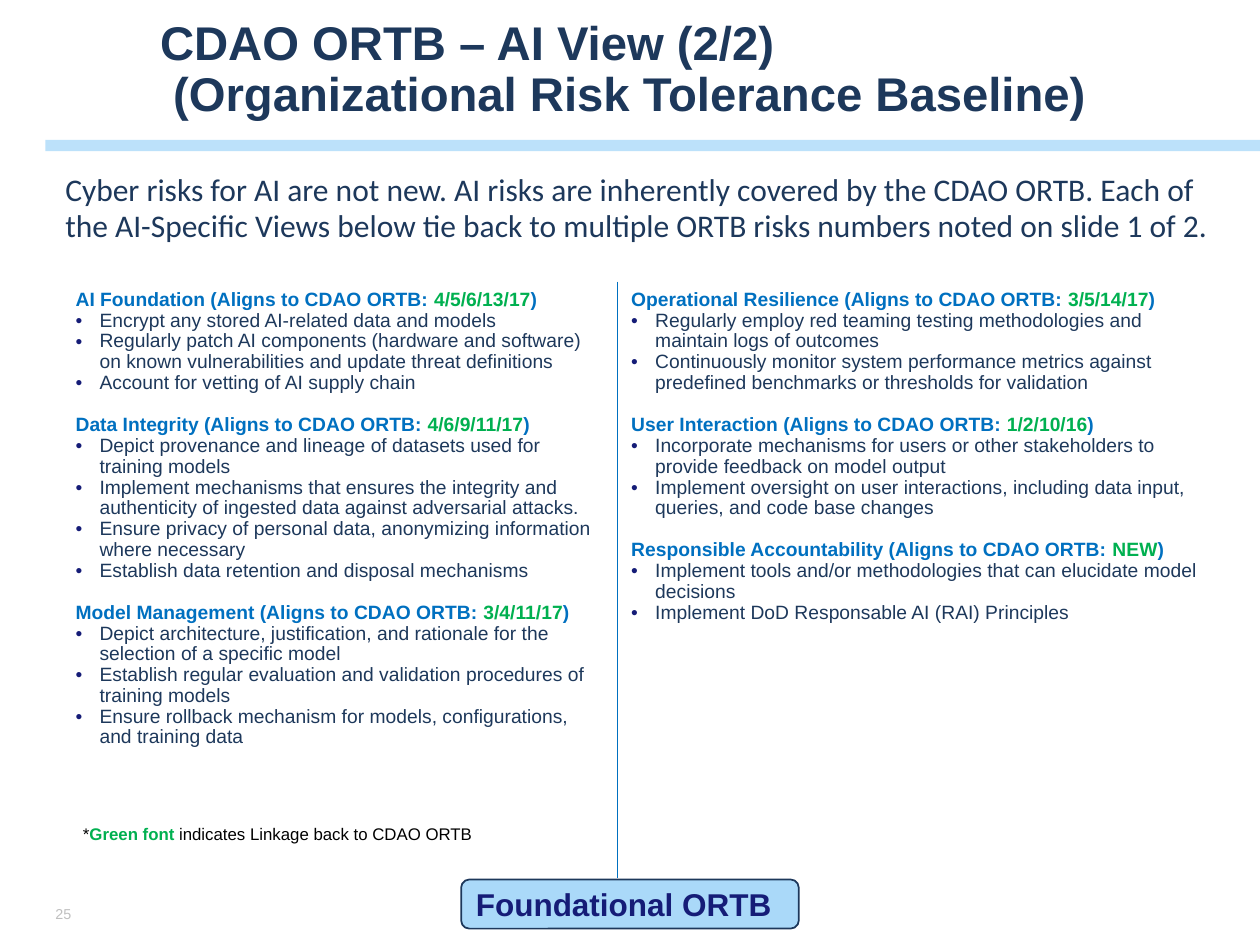
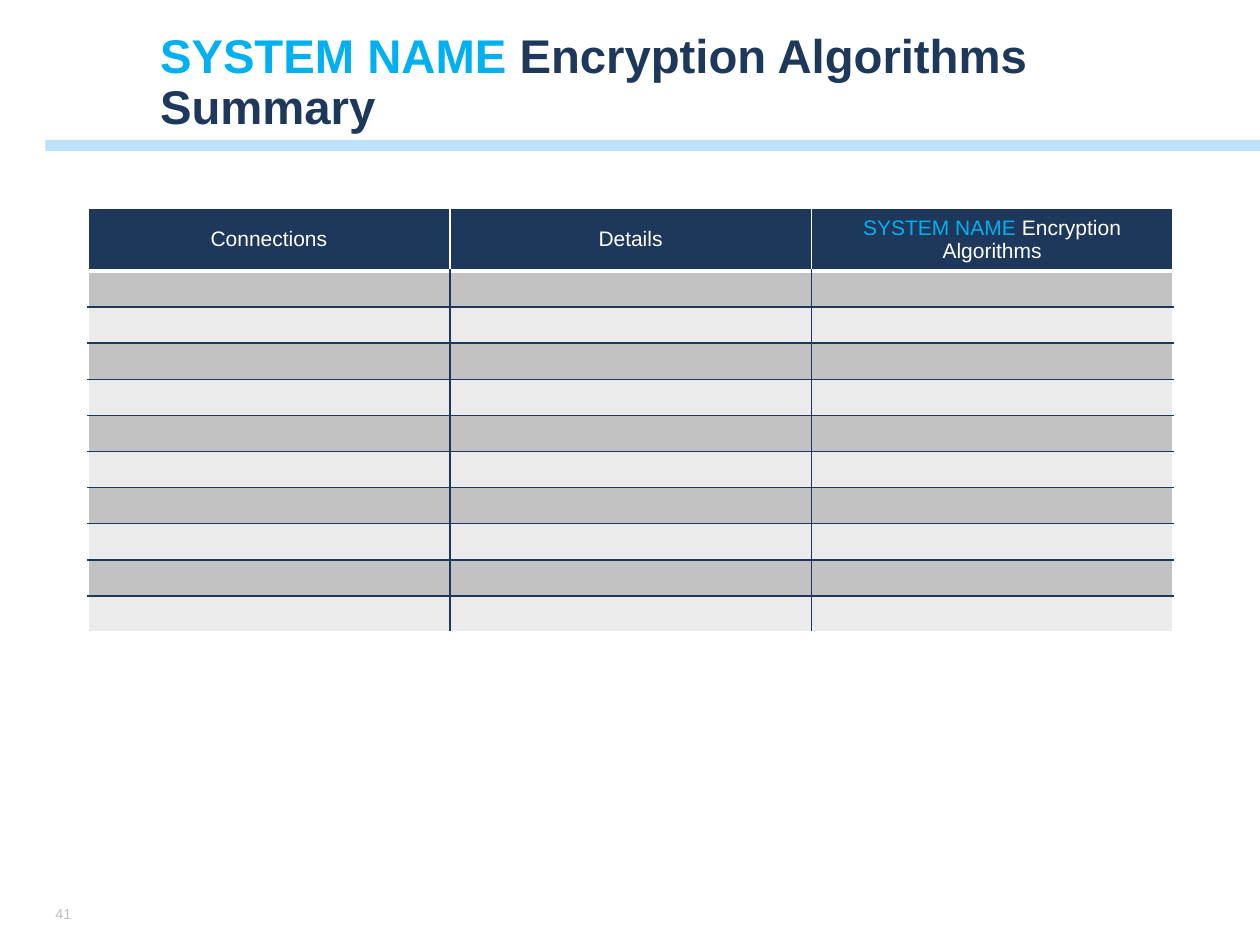
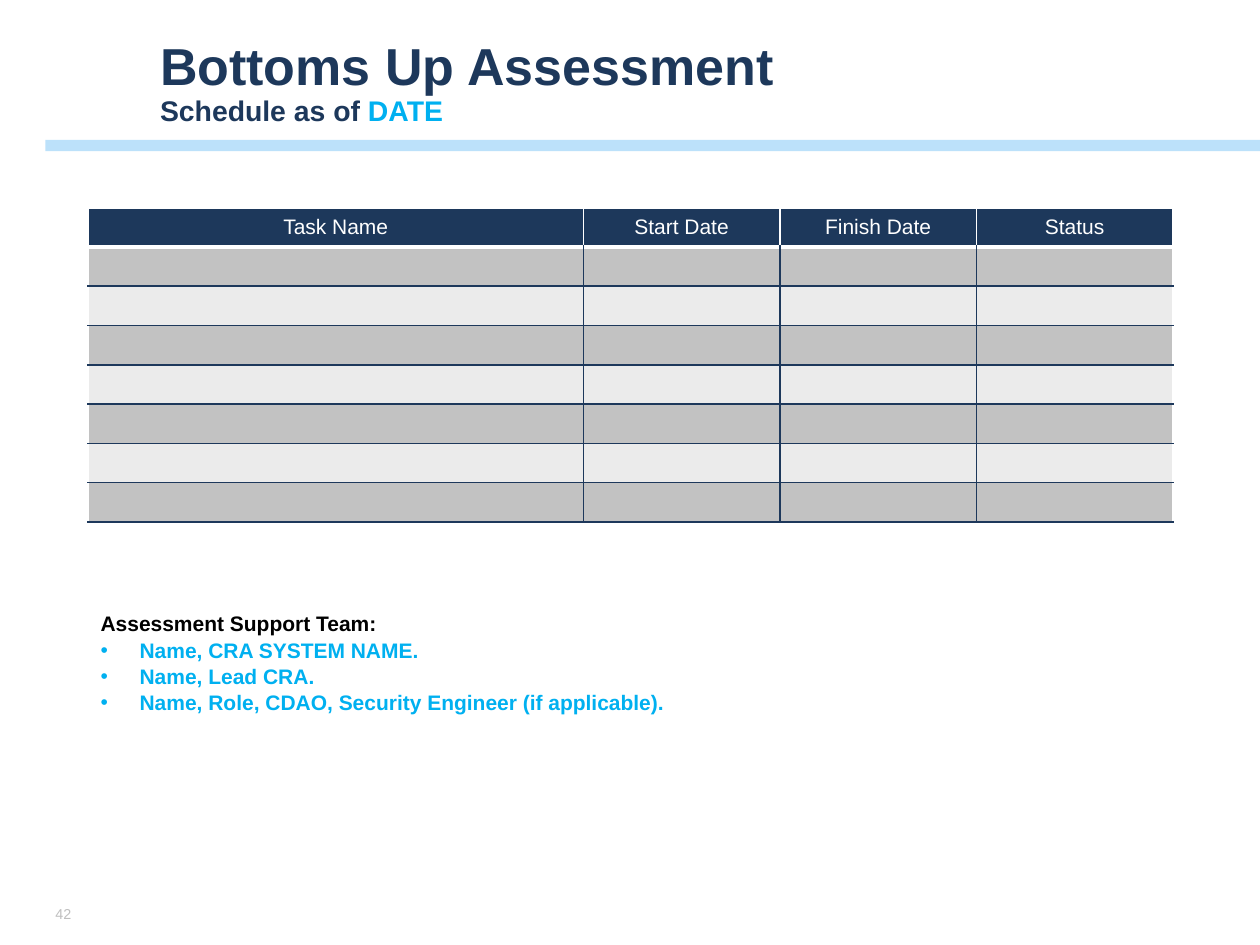
"""Build three security assessment slides: a risk view and two status tables."""
from dataclasses import dataclass, field
from typing import NamedTuple

import lxml.etree
import pptx
import pptx.dml.color
import pptx.enum.shapes
import pptx.enum.text
import pptx.oxml.ns
import pptx.util

RGBColor = pptx.dml.color.RGBColor
Pt = pptx.util.Pt
Shape = pptx.enum.shapes.MSO_SHAPE
Align = pptx.enum.text.PP_ALIGN
Anchor = pptx.enum.text.MSO_ANCHOR
qn = pptx.oxml.ns.qn

NAVY = RGBColor(0x1D, 0x38, 0x5B)
INDIGO = RGBColor(0x15, 0x1C, 0x77)
BLUE = RGBColor(0x00, 0x70, 0xC0)
CYAN = RGBColor(0x00, 0xB0, 0xF0)
SKY = RGBColor(0x65, 0xBA, 0xF5)
GREEN = RGBColor(0x00, 0xB0, 0x50)
BLACK = RGBColor(0x00, 0x00, 0x00)
WHITE = RGBColor(0xFF, 0xFF, 0xFF)
SILVER = RGBColor(0xBF, 0xBF, 0xBF)
DARK_ROW = RGBColor(0xC2, 0xC2, 0xC2)
LIGHT_ROW = RGBColor(0xEB, 0xEB, 0xEB)

WIDTH, HEIGHT = pptx.util.Inches(10), pptx.util.Inches(7.5)
COLUMNS, ROWS = 100, 75


class Area(NamedTuple):
    """A rectangle in grid columns and rows."""
    column: float
    row: float
    columns: float
    rows: float


class Span(NamedTuple):
    """A piece of text with its own format."""
    text: str
    colour: RGBColor = NAVY
    size: float = 27
    bold: bool = True


class Topic(NamedTuple):
    """A heading with its linked risk numbers and its points."""
    name: str
    risks: str
    points: list[str]


@dataclass
class Grid:
    """A striped table with a header row."""
    headers: list[list[Span]]
    widths: list[float]
    header_rows: float
    body_rows: float
    count: int
    last_edge: RGBColor
    column: float = 7
    row: float = 16.5
    stripes: tuple = field(default=(DARK_ROW, LIGHT_ROW))


TITLE_AREA = Area(11.7, 3.3, 86.1, 6.7)
BAND_AREA = Area(3.6, 11.1, 96.4, 0.9)
NUMBER_AREA = Area(3.7, 71.2, 3.2, 2.6)

LEFT_TOPICS = [
    Topic("AI Foundation", "4/5/6/13/17", [
        "Encrypt any stored AI-related data and models",
        "Regularly patch AI components (hardware and software) on known "
        "vulnerabilities and update threat definitions",
        "Account for vetting of AI supply chain"]),
    Topic("Data Integrity", "4/6/9/11/17", [
        "Depict provenance and lineage of datasets used for training models",
        "Implement mechanisms that ensures the integrity and authenticity of "
        "ingested data against adversarial attacks.",
        "Ensure privacy of personal data, anonymizing information where necessary",
        "Establish data retention and disposal mechanisms"]),
    Topic("Model Management", "3/4/11/17", [
        "Depict architecture, justification, and rationale for the selection of "
        "a specific model",
        "Establish regular evaluation and validation procedures of training models",
        "Ensure rollback mechanism for models, configurations, and training data"]),
]
RIGHT_TOPICS = [
    Topic("Operational Resilience", "3/5/14/17", [
        "Regularly employ red teaming testing methodologies and maintain logs of "
        "outcomes",
        "Continuously monitor system performance metrics against predefined "
        "benchmarks or thresholds for validation"]),
    Topic("User Interaction", "1/2/10/16", [
        "Incorporate mechanisms for users or other stakeholders to provide "
        "feedback on model output",
        "Implement oversight on user interactions, including data input, queries, "
        "and code base changes"]),
    Topic("Responsible Accountability", "NEW", [
        "Implement tools and/or methodologies that can elucidate model decisions",
        "Implement DoD Responsable AI (RAI) Principles"]),
]
TEAM = ["Name, CRA SYSTEM NAME.", "Name, Lead CRA.",
        "Name, Role, CDAO, Security Engineer (if applicable)."]


def across(columns: float) -> int:
    """Turn grid columns into a length."""
    return round(WIDTH * columns / COLUMNS)


def down(rows: float) -> int:
    """Turn grid rows into a length."""
    return round(HEIGHT * rows / ROWS)


def place(area: Area) -> tuple[int, int, int, int]:
    """Turn a grid area into left, top, width and height."""
    return across(area.column), down(area.row), across(area.columns), down(area.rows)


def write(para, text: str, *, size: float, colour: RGBColor, bold: bool = False,
          font: str = "Arial") -> None:
    """Add text to a paragraph, turning each newline into a line break."""
    for index, line in enumerate(text.split("\n")):
        if index:
            para.add_line_break()
        run = para.add_run()
        run.text = line
        run.font.size, run.font.name, run.font.bold = Pt(size), font, bold
        run.font.color.rgb = colour


def write_spans(para, spans: list[Span]) -> None:
    """Add several formatted spans to a paragraph."""
    for span in spans:
        write(para, span.text, size=span.size, colour=span.colour, bold=span.bold)


def next_paragraph(frame):
    """Return the first paragraph while it is empty, otherwise a new one."""
    first = frame.paragraphs[0]
    return frame.add_paragraph() if first.runs else first


def add_bullet(para, indent: float, colour: RGBColor) -> None:
    """Give a paragraph a coloured bullet with a hanging indent in columns."""
    properties = para._p.get_or_add_pPr()
    properties.set("marL", str(across(indent)))
    properties.set("indent", str(-across(indent)))
    paint = lxml.etree.SubElement(properties, qn("a:buClr"))
    lxml.etree.SubElement(paint, qn("a:srgbClr"), val=str(colour))
    lxml.etree.SubElement(properties, qn("a:buFont"), typeface="Arial")
    lxml.etree.SubElement(properties, qn("a:buChar"), char="•")


def add_text_box(page, area: Area):
    """Add a wrapping text box and return its text frame."""
    frame = page.shapes.add_textbox(*place(area)).text_frame
    frame.word_wrap = True
    return frame


def add_panel(page, area: Area, kind, opacity: int):
    """Add a translucent sky-blue shape without a line or shadow."""
    panel = page.shapes.add_shape(kind, *place(area))
    panel.shadow.inherit = False
    panel.fill.solid()
    panel.fill.fore_color.rgb = SKY
    paint = panel.fill._xPr.find(".//" + qn("a:srgbClr"))
    lxml.etree.SubElement(paint, qn("a:alpha"), val=str(opacity * 1000))
    panel.line.fill.background()
    return panel


def add_page(deck, number: int, title: list[Span], bottom: float = 0.5):
    """Add a page with its title, band and page number."""
    page = deck.slides.add_slide(deck.slide_layouts[5])
    add_panel(page, BAND_AREA, Shape.RECTANGLE, 43)
    heading = page.shapes.title
    heading.left, heading.top, heading.width, heading.height = place(TITLE_AREA)
    frame = heading.text_frame
    frame.word_wrap = True
    frame.auto_size = pptx.enum.text.MSO_AUTO_SIZE.NONE
    frame.vertical_anchor = Anchor.MIDDLE
    frame.margin_bottom = down(bottom)
    para = frame.paragraphs[0]
    para.alignment, para.line_spacing = Align.LEFT, 0.9
    write_spans(para, title)
    frame = add_text_box(page, NUMBER_AREA)
    frame.vertical_anchor = Anchor.MIDDLE
    frame.margin_left = frame.margin_right = across(0.7)
    frame.margin_top = frame.margin_bottom = down(0.4)
    write(frame.paragraphs[0], str(number), size=8.2, colour=SILVER)
    return page


def set_borders(cell, **edges: tuple[RGBColor, float]) -> None:
    """Draw cell borders, named L, R, T and B, ahead of the cell's fill."""
    properties = cell._tc.get_or_add_tcPr()
    for index, (side, (colour, points)) in enumerate(edges.items()):
        line = lxml.etree.Element(qn(f"a:ln{side}"), w=str(Pt(points)))
        paint = lxml.etree.SubElement(line, qn("a:solidFill"))
        lxml.etree.SubElement(paint, qn("a:srgbClr"), val=str(colour))
        properties.insert(index, line)


def add_plain_table(page, area: Area, widths: list[float], heights: list[float]):
    """Add a table without banding, sized by grid columns and rows."""
    table = page.shapes.add_table(len(heights), len(widths), *place(area)).table
    table.first_row = table.horz_banding = False
    for column, width in zip(table.columns, widths):
        column.width = across(width)
    for row, height in zip(table.rows, heights):
        row.height = down(height)
    return table


def paint_cell(cell, colour: RGBColor) -> None:
    """Fill a cell with one colour."""
    cell.fill.solid()
    cell.fill.fore_color.rgb = colour


def add_grid(page, grid: Grid) -> None:
    """Add a striped table with a header and empty rows."""
    heights = [grid.header_rows] + [grid.body_rows] * grid.count
    area = Area(grid.column, grid.row, sum(grid.widths), sum(heights))
    table = add_plain_table(page, area, grid.widths, heights)
    last = len(grid.widths) - 1
    for index, spans in enumerate(grid.headers):
        cell = table.cell(0, index)
        paint_cell(cell, NAVY)
        set_borders(cell, L=(WHITE, 1), R=(WHITE, 1), T=(WHITE, 1), B=(WHITE, 3))
        cell.vertical_anchor = Anchor.MIDDLE
        para = cell.text_frame.paragraphs[0]
        para.alignment = Align.CENTER
        write_spans(para, spans)
        for row in range(1, grid.count + 1):
            cell = table.cell(row, index)
            paint_cell(cell, grid.stripes[(row - 1) % 2])
            set_borders(cell,
                        L=(NAVY if index else WHITE, 1),
                        R=(NAVY if index < last else WHITE, 1),
                        T=(NAVY if row > 1 else WHITE, 1),
                        B=(NAVY if row < grid.count else grid.last_edge, 1))
            para = cell.text_frame.paragraphs[0]
            lxml.etree.SubElement(para._p, qn("a:endParaRPr"), sz="1000")


def write_topics(cell, topics: list[Topic]) -> None:
    """Write headed bullet lists into a table cell."""
    cell.margin_left = cell.margin_right = across(1.1)
    cell.margin_top = cell.margin_bottom = down(0.6)
    frame = cell.text_frame
    for index, topic in enumerate(topics):
        para = next_paragraph(frame)
        para.line_spacing = 0.97
        if index:
            para.space_before = Pt(12.2)
        write_spans(para, [Span(f"{topic.name} (Aligns to CDAO ORTB: ", BLUE, 11),
                           Span(topic.risks, GREEN, 11), Span(")", BLUE, 11)])
        for point in topic.points:
            para = next_paragraph(frame)
            para.line_spacing = 0.97
            add_bullet(para, 1.9, INDIGO)
            write(para, point, size=11, colour=NAVY)


def build_risk_view(deck) -> None:
    """Build the AI risk view."""
    page = add_page(deck, 25, [Span(
        "CDAO ORTB – AI View (2/2)\n (Organizational Risk Tolerance Baseline)")],
        bottom=2.6)
    table = add_plain_table(page, Area(4.9, 22.4, 92.9, 47.2), [44.1, 48.8], [47.2])
    left, right = table.cell(0, 0), table.cell(0, 1)
    for cell, topics in ((left, LEFT_TOPICS), (right, RIGHT_TOPICS)):
        paint_cell(cell, WHITE)
        write_topics(cell, topics)
    set_borders(left, R=(BLUE, 1))
    set_borders(right, L=(BLUE, 1))

    note = add_text_box(page, Area(5.6, 64.9, 39.9, 2.6)).paragraphs[0]
    write_spans(note, [Span("*", BLACK, 9.6, False), Span("Green font ", GREEN, 9.6),
                       Span("indicates Linkage back to CDAO ORTB", BLACK, 9.6, False)])

    badge = add_panel(page, Area(36.6, 69.8, 26.8, 3.9), Shape.ROUNDED_RECTANGLE, 55)
    badge.line.color.rgb, badge.line.width = NAVY, Pt(1)
    badge.text_frame.vertical_anchor = Anchor.MIDDLE
    para = badge.text_frame.paragraphs[0]
    para.alignment = Align.LEFT
    write(para, "Foundational ORTB", size=18, colour=INDIGO, bold=True)

    intro = add_text_box(page, Area(4.2, 13.2, 93, 7.1)).paragraphs[0]
    intro.line_spacing = 0.96
    write(intro, "Cyber risks for AI are not new. AI risks are inherently covered by "
          "the CDAO ORTB. Each of the AI-Specific Views below tie back to multiple "
          "ORTB risks numbers noted on slide 1 of 2.",
          size=18, colour=NAVY, font="Calibri")


def header(text: str, colour: RGBColor = WHITE) -> Span:
    """Return a span in the table header format."""
    return Span(text, colour, 12, False)


def build_encryption(deck) -> None:
    """Build the encryption algorithms table."""
    page = add_page(deck, 41, [Span("SYSTEM NAME ", CYAN),
                               Span("Encryption Algorithms Summary")])
    headers = [[header("Connections")], [header("Details")],
               [header("SYSTEM NAME ", CYAN), header("Encryption Algorithms")]]
    add_grid(page, Grid(headers, [28.7] * 3, 4.6, 2.87, 10, WHITE))


def build_schedule(deck) -> None:
    """Build the assessment schedule and its support team."""
    page = add_page(deck, 42, [Span("Bottoms Up Assessment\n", size=29.7),
                               Span("Schedule as of ", size=16.2),
                               Span("DATE", CYAN, 16.2)])
    names = ["Task Name", "Start Date", "Finish Date", "Status"]
    add_grid(page, Grid([[header(name)] for name in names], [39.3] + [15.6] * 3,
                        3.1, 3.12, 7, NAVY))
    frame = add_text_box(page, Area(7, 48, 71.1, 15.8))
    para = frame.paragraphs[0]
    write(para, "Assessment Support Team:", size=12, colour=BLACK, bold=True)
    for member in TEAM:
        para = next_paragraph(frame)
        para.line_spacing = 1.04
        add_bullet(para, 3.1, CYAN)
        write(para, member, size=12, colour=CYAN, bold=True)


def main() -> None:
    """Build the deck and save it."""
    deck = pptx.Presentation()
    deck.slide_width, deck.slide_height = WIDTH, HEIGHT
    build_risk_view(deck)
    build_encryption(deck)
    build_schedule(deck)
    deck.save("out.pptx")


if __name__ == "__main__":
    main()
